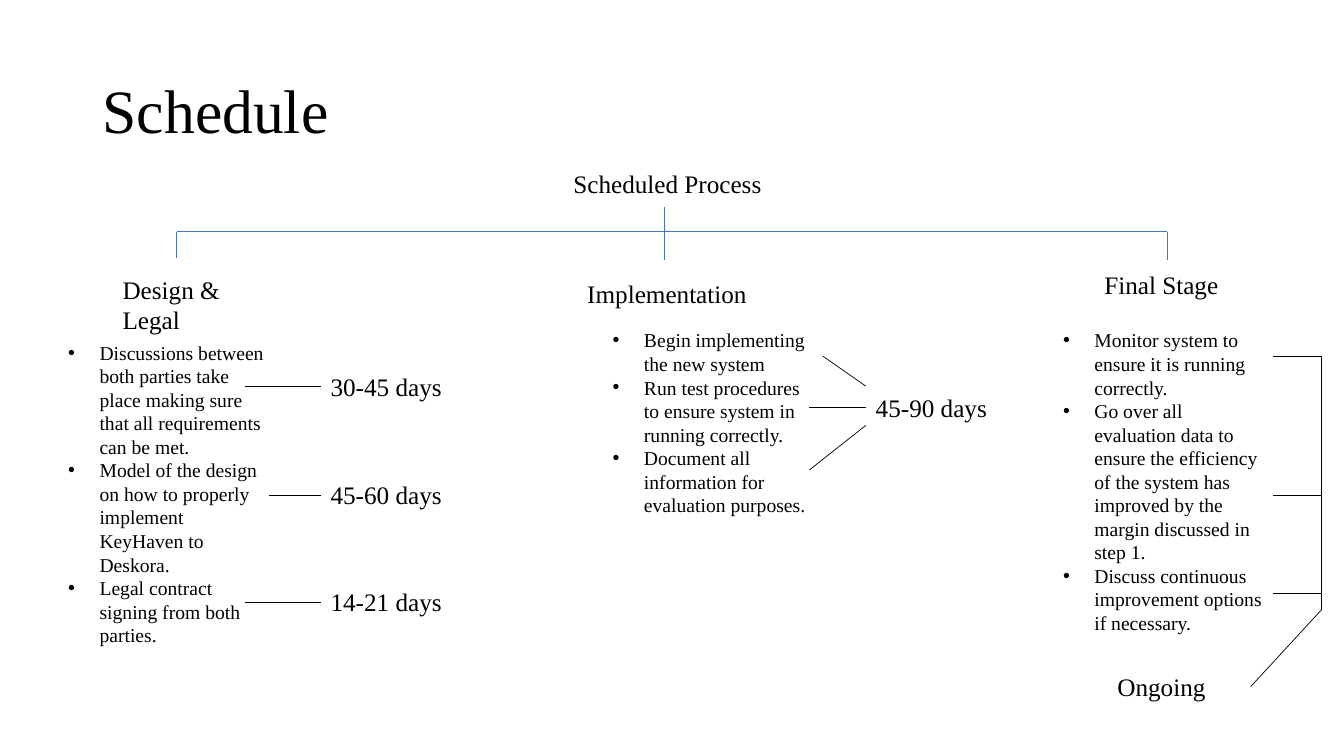
from dataclasses import dataclass

from lxml.etree import SubElement
from pptx import Presentation
from pptx.dml.color import RGBColor
from pptx.enum.shapes import MSO_CONNECTOR
from pptx.enum.text import MSO_ANCHOR, MSO_AUTO_SIZE
from pptx.oxml.ns import qn
from pptx.util import Cm, Pt


@dataclass(frozen=True)
class Theme:
    font: str = "Times New Roman"
    ink: RGBColor = RGBColor(0x00, 0x00, 0x00)
    tree: RGBColor = RGBColor(0x44, 0x72, 0xC4)
    title_size: Pt = Pt(44)
    label_size: Pt = Pt(18)
    list_size: Pt = Pt(14)
    line_width: Pt = Pt(0.5)
    bullet_indent: Cm = Cm(0.79)
    label_height: float = 1.02


def apply_format(target, values):
    for name, value in values.items():
        setattr(target, name, value)


class SlideBuilder:
    def __init__(self, slide, theme):
        self.slide = slide
        self.theme = theme

    def text(self, lines, left, top, width, height, size, frame_format=None, paragraph_format=None):
        shape = self.slide.shapes.add_textbox(Cm(left), Cm(top), Cm(width), Cm(height))
        frame = shape.text_frame
        apply_format(frame, {"word_wrap": True, "auto_size": MSO_AUTO_SIZE.SHAPE_TO_FIT_TEXT,
                             **(frame_format or {})})
        frame.text = "\n".join(lines)
        for paragraph in frame.paragraphs:
            apply_format(paragraph, paragraph_format or {})
            run_font = paragraph.runs[0].font
            apply_format(run_font, {"name": self.theme.font, "size": size})
            run_font.color.rgb = self.theme.ink
        return shape

    def title(self, wording, left, top, width, height):
        return self.text([wording], left, top, width, height, self.theme.title_size,
                         {"auto_size": MSO_AUTO_SIZE.NONE, "vertical_anchor": MSO_ANCHOR.MIDDLE},
                         {"line_spacing": 0.9})

    def label(self, wording, left, top, width, height=None):
        return self.text([wording], left, top, width, height or self.theme.label_height,
                         self.theme.label_size)

    def bullets(self, items, left, top, width, height):
        shape = self.text(items, left, top, width, height, self.theme.list_size)
        for paragraph in shape.text_frame.paragraphs:
            properties = paragraph._p.get_or_add_pPr()
            properties.set("marL", str(self.theme.bullet_indent))
            properties.set("indent", str(-self.theme.bullet_indent))
            SubElement(properties, qn("a:buFont"), typeface="Arial")
            SubElement(properties, qn("a:buChar"), char="•")
        return shape

    def line(self, start, end, color=None):
        points = [Cm(value) for value in (*start, *end)]
        connector = self.slide.shapes.add_connector(MSO_CONNECTOR.STRAIGHT, *points)
        connector.line.width = self.theme.line_width
        connector.line.color.rgb = color or self.theme.ink
        SubElement(connector._element.spPr, qn("a:effectLst"))
        return connector


def add_tree(builder):
    trunk, bar = 16.74, 5.84
    builder.label("Scheduled Process", 14.2, 4.11, 5.54)
    builder.line((trunk, 5.21), (trunk, bar), builder.theme.tree)
    for branch, bottom in ((4.45, 6.5), (trunk, 6.55), (29.41, 6.55)):
        if branch != trunk:
            builder.line((trunk, bar), (branch, bar), builder.theme.tree)
        builder.line((branch, bar), (branch, bottom), builder.theme.tree)


def add_stages(builder):
    stages = (
        (("Design & Legal", 2.84, 6.78, 3.94, 1.8), (1.47, 8.46, 8.64), (
            "Discussions between both parties take place making sure that all requirements can be met.",
            "Model of the design on how to properly implement KeyHaven to Deskora.",
            "Legal contract signing from both parties.")),
        (("Implementation", 14.55, 6.88, 4.75), (15.19, 8.15, 5.64), (
            "Begin implementing the new system",
            "Run test procedures to ensure system in running correctly.",
            "Document all information for evaluation purposes.")),
        (("Final Stage", 27.58, 6.65, 3.43), (26.54, 8.15, 8.64), (
            "Monitor system to ensure it is running correctly.",
            "Go over all evaluation data to ensure the efficiency of the system has improved "
            "by the margin discussed in step 1.",
            "Discuss continuous improvement options if necessary.")),
    )
    for heading, (left, top, height), items in stages:
        builder.label(*heading)
        builder.bullets(items, left, top, 5.54, height)


def add_durations(builder):
    durations = (
        ("30-45 days", 8.08, 9.22, 6.17),
        ("45-60 days", 8.08, 11.96, 6.78),
        ("14-21 days", 8.08, 14.66, 6.17),
        ("45-90 days", 21.82, 9.75, 20.4),
    )
    for wording, left, top, line_end in durations:
        label = builder.label(wording, left, top, 3.61)
        middle = top + builder.theme.label_height / 2
        builder.line((left, middle), (line_end, middle)).begin_connect(label, 1)
    builder.line((21.82, 9.73), (20.73, 8.97))
    builder.line((20.4, 11.84), (21.82, 10.72))


def add_ongoing_bracket(builder):
    ongoing = builder.label("Ongoing", 27.91, 16.79, 3.61)
    inner, spine, top, bottom = 32.08, 33.3, 8.97, 15.37
    for level in (top, 12.47, 14.96):
        builder.line((inner, level), (spine, level))
    builder.line((spine, top), (spine, bottom))
    builder.line((spine, bottom), (31.52, 17.3)).end_connect(ongoing, 3)


def main():
    presentation = Presentation()
    apply_format(presentation, {"slide_width": Cm(33.87), "slide_height": Cm(19.05)})
    slide = presentation.slides.add_slide(presentation.slide_layouts[6])
    builder = SlideBuilder(slide, Theme())
    builder.title("Schedule", 2.34, 1.02, 29.21, 3.68)
    add_tree(builder)
    add_stages(builder)
    add_durations(builder)
    add_ongoing_bracket(builder)
    presentation.save("out.pptx")


if __name__ == "__main__":
    main()
